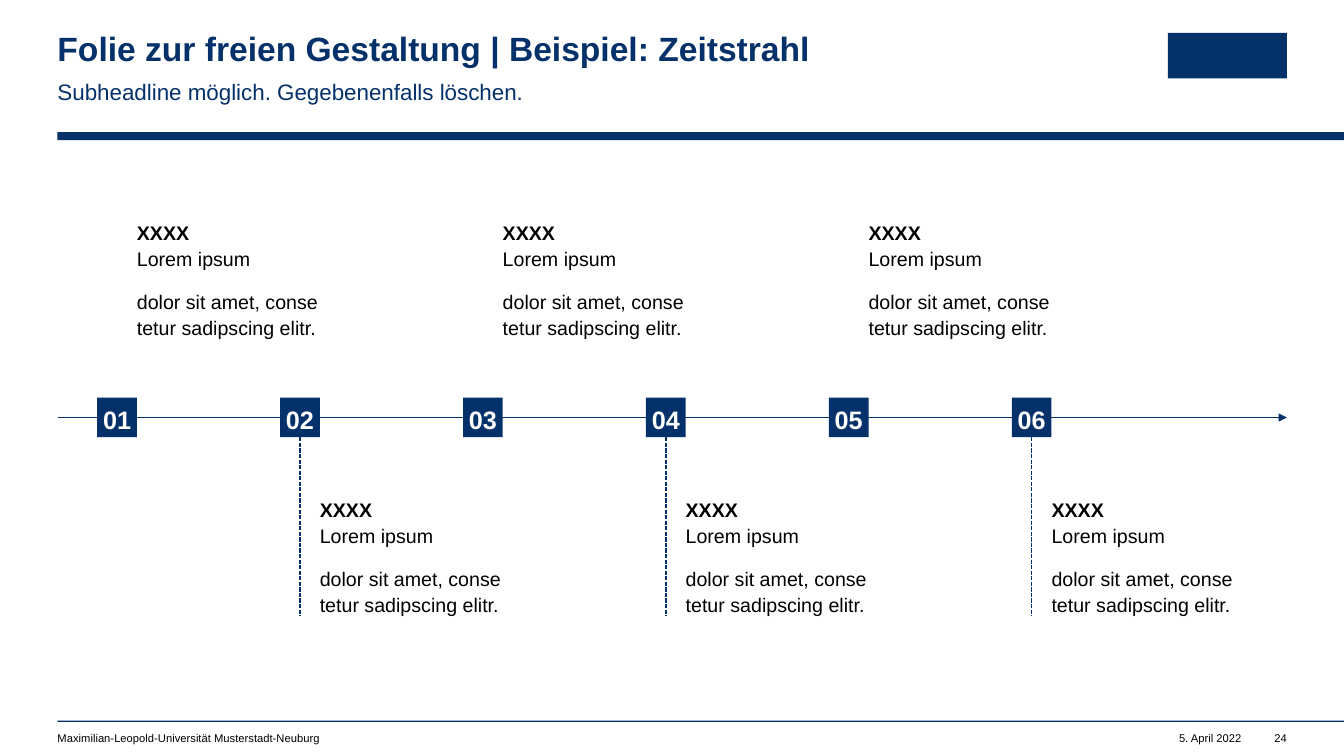
import copy

import pptx
import pptx.dml.color
import pptx.enum.dml
import pptx.enum.shapes
import pptx.enum.text
import pptx.oxml.ns
import pptx.oxml.xmlchemy
import pptx.util

NAVY = pptx.dml.color.RGBColor(0x04, 0x31, 0x6A)
BLACK = pptx.dml.color.RGBColor(0, 0, 0)
WHITE = pptx.dml.color.RGBColor(0xFF, 0xFF, 0xFF)

SLIDE_WIDTH, SLIDE_HEIGHT = 33.87, 19.05
MARGIN = 1.45
RIGHT_EDGE = 32.43
AXIS_Y = 10.52
MARKER_SIZE = 1
FIRST_MARKER = 2.45
MARKER_STEP = 4.61
UPPER_TEXT, LOWER_TEXT = 5.52, 12.5
DASH_END = 15.52

TITLE = {"size": 24, "bold": True, "color": NAVY}
SUBTITLE = {"size": 16, "color": NAVY}
FOOTER = {"size": 8, "color": BLACK}
NUMBER = {"size": 18, "bold": True, "color": WHITE}
ENTRY = {"size": 14, "color": BLACK}
ENTRY_HEAD = {**ENTRY, "bold": True}

ENTRY_PARAGRAPHS = [
    [("XXXX", ENTRY_HEAD), ("Lorem ipsum", ENTRY)],
    [("dolor sit amet, conse", ENTRY), ("tetur sadipscing elitr.", ENTRY)],
]
BODY_SPACING = {"line_spacing": 1.1, "space_after": pptx.util.Pt(12)}


def format_run(run, style):
    values = {"name": "Arial", "bold": False, **style}
    values["size"] = pptx.util.Pt(values["size"])
    run.font.color.rgb = values.pop("color")
    for name, value in values.items():
        setattr(run.font, name, value)


def fill_text(shape, paragraphs, paragraph_format, wrap=True):
    """Write paragraphs given as lists of (line, style)."""
    frame = shape.text_frame
    for side in ("left", "top", "right", "bottom"):
        setattr(frame, f"margin_{side}", 0)
    frame.word_wrap = wrap
    for index, lines in enumerate(paragraphs):
        paragraph = frame.add_paragraph() if index else frame.paragraphs[0]
        for name, value in paragraph_format.items():
            setattr(paragraph, name, value)
        for line_index, (line, style) in enumerate(lines):
            if line_index:
                paragraph.add_line_break()
            run = paragraph.add_run()
            run.text = line
            format_run(run, style)
        # A line break needs the text size too, or it makes its line taller.
        for line_break in paragraph._p.findall(pptx.oxml.ns.qn("a:br")):
            line_break.append(copy.deepcopy(paragraph.runs[0]._r.rPr))


def add_text(slide, box, paragraphs, paragraph_format, wrap=True):
    shape = slide.shapes.add_textbox(*map(pptx.util.Cm, box))
    fill_text(shape, paragraphs, paragraph_format, wrap)


def add_block(slide, *box):
    """Add a navy rectangle at left, top, width, height."""
    shape = slide.shapes.add_shape(
        pptx.enum.shapes.MSO_SHAPE.RECTANGLE, *map(pptx.util.Cm, box)
    )
    shape.shadow.inherit = False
    shape.fill.solid()
    shape.fill.fore_color.rgb = NAVY
    shape.line.fill.background()
    return shape


def add_line(slide, start, end):
    connector = slide.shapes.add_connector(
        pptx.enum.shapes.MSO_CONNECTOR.STRAIGHT, *map(pptx.util.Cm, start + end)
    )
    connector.line.color.rgb = NAVY
    connector.line.width = pptx.util.Pt(1)
    properties = connector._element.spPr
    properties.append(pptx.oxml.xmlchemy.OxmlElement("a:effectLst"))
    return connector


def add_axis(slide):
    axis = add_line(slide, (MARGIN, AXIS_Y), (RIGHT_EDGE, AXIS_Y))
    arrowhead = pptx.oxml.xmlchemy.OxmlElement("a:tailEnd")
    arrowhead.set("type", "triangle")
    axis._element.spPr.find(pptx.oxml.ns.qn("a:ln")).append(arrowhead)


def add_milestone(slide, index):
    """Add a numbered marker; its text alternates above and below the axis."""
    left = FIRST_MARKER + index * MARKER_STEP
    below = index % 2 == 1
    marker = add_block(slide, left, AXIS_Y - MARKER_SIZE / 2, MARKER_SIZE, MARKER_SIZE)
    marker.text_frame.vertical_anchor = pptx.enum.text.MSO_ANCHOR.MIDDLE
    centred = {**BODY_SPACING, "alignment": pptx.enum.text.PP_ALIGN.CENTER}
    fill_text(marker, [[(f"{index + 1:02}", NUMBER)]], centred)
    text_top = LOWER_TEXT if below else UPPER_TEXT
    add_text(slide, (left + MARKER_SIZE, text_top, 4.95, 3), ENTRY_PARAGRAPHS, BODY_SPACING)
    if below:
        centre = left + MARKER_SIZE / 2
        dash = add_line(slide, (centre, AXIS_Y + MARKER_SIZE / 2), (centre, DASH_END))
        dash.line.dash_style = pptx.enum.dml.MSO_LINE.SQUARE_DOT


def add_header(slide):
    add_block(slide, MARGIN, 3.33, SLIDE_WIDTH - MARGIN, 0.2)
    add_block(slide, 29.43, 0.83, 3, 1.15)
    title = "Folie zur freien Gestaltung | Beispiel: Zeitstrahl"
    add_text(slide, (MARGIN, 0.83, 19.02, 0.91), [[(title, TITLE)]], {"line_spacing": 0.9})
    subtitle = "Subheadline möglich. Gegebenenfalls löschen."
    add_text(slide, (MARGIN, 1.9, 19.02, 0.69), [[(subtitle, SUBTITLE)]], BODY_SPACING)


def add_footer(slide):
    add_block(slide, MARGIN, 18.16, SLIDE_WIDTH - MARGIN, 0.03)
    right = {"alignment": pptx.enum.text.PP_ALIGN.RIGHT}
    top, height = 18.44, 0.33
    institution = "Maximilian-Leopold-Universität Musterstadt-Neuburg"
    add_text(slide, (MARGIN, top, 15.19, height), [[(institution, FOOTER)]], {})
    add_text(slide, (28.93, top, 2.36, height), [[("5. April 2022", FOOTER)]], right, False)
    add_text(slide, (31.9, top, 0.53, height), [[("24", FOOTER)]], right, False)


def main():
    presentation = pptx.Presentation()
    presentation.slide_width = pptx.util.Cm(SLIDE_WIDTH)
    presentation.slide_height = pptx.util.Cm(SLIDE_HEIGHT)
    slide = presentation.slides.add_slide(presentation.slide_layouts[6])
    add_header(slide)
    add_footer(slide)
    add_axis(slide)
    for index in range(6):
        add_milestone(slide, index)
    presentation.save("out.pptx")


if __name__ == "__main__":
    main()
